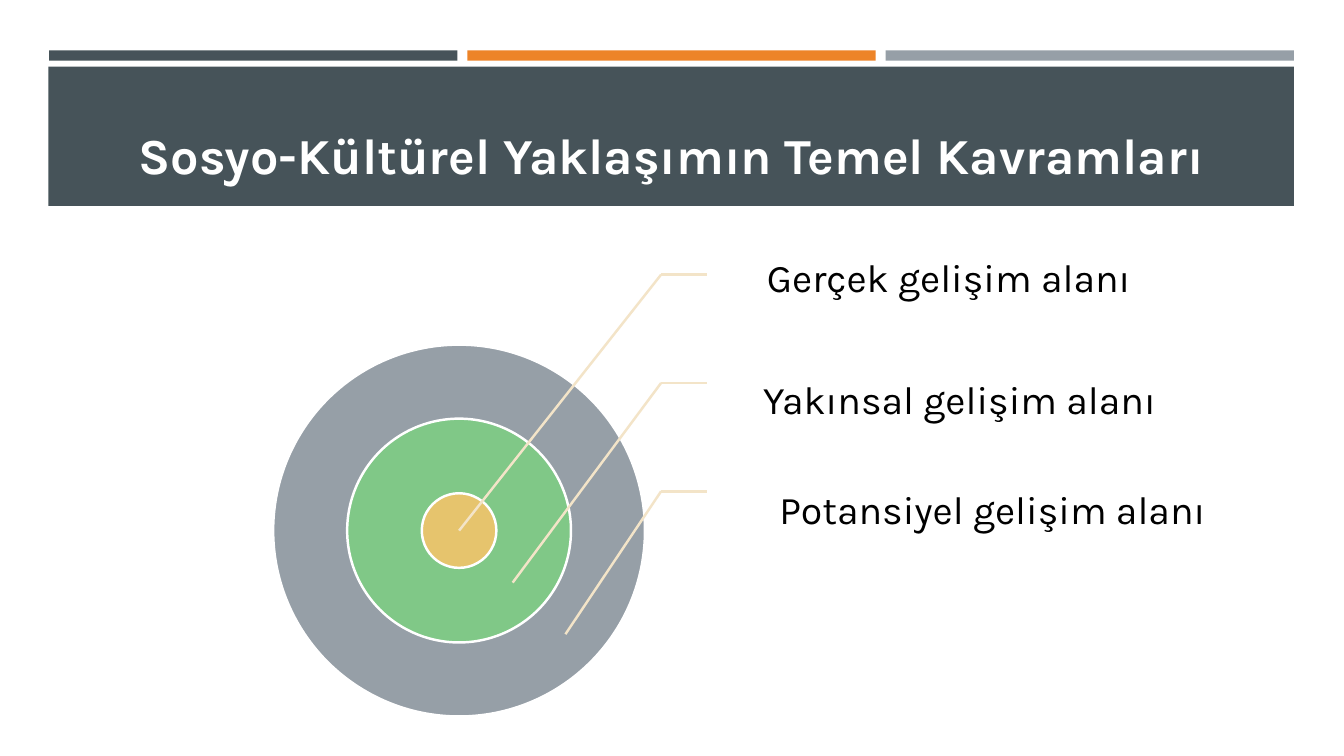
from lxml.etree import SubElement
from pptx import Presentation
from pptx.dml.color import RGBColor
from pptx.enum.shapes import MSO_CONNECTOR, MSO_SHAPE
from pptx.enum.text import MSO_ANCHOR, MSO_AUTO_SIZE, PP_ALIGN
from pptx.oxml.ns import qn
from pptx.util import Cm, Pt

FONT = "Karla"
SLATE, ORANGE, GREY = "465359", "ED8428", "969FA7"
GREEN, GOLD, CREAM = "80C887", "E6C46D", "F3E4C8"
WHITE, BLACK = "FFFFFF", "000000"
LINE_WIDTH = Pt(1.75)

# Common centre of the circles, in cm
CENTER_X, CENTER_Y = 11.57, 13.37
# Bend and outer end of every leader line, in cm
BEND_X, LEADER_END_X = 16.66, 17.83
FIRST_LEADER_Y, LEADER_STEP = 6.92, 2.73


def color(hex_value):
    return RGBColor.from_string(hex_value)


def write(frame, text, *, size, fill, bold=False, align=PP_ALIGN.LEFT,
          anchor=MSO_ANCHOR.MIDDLE, spacing=None, insets=None):
    frame.word_wrap = True
    frame.auto_size = MSO_AUTO_SIZE.NONE
    frame.vertical_anchor = anchor
    if insets:
        (frame.margin_left, frame.margin_top,
         frame.margin_right, frame.margin_bottom) = map(Cm, insets)
    paragraph = frame.paragraphs[0]
    paragraph.alignment = align
    if spacing:
        paragraph.line_spacing = spacing
    run = paragraph.add_run()
    run.text = text
    run.font.name = FONT
    run.font.size = Pt(size)
    run.font.bold = bold
    run.font.color.rgb = color(fill)


def add_filled(slide, kind, left, top, width, height, fill, outline=None):
    filled = slide.shapes.add_shape(kind, Cm(left), Cm(top), Cm(width), Cm(height))
    filled.shadow.inherit = False
    filled.fill.solid()
    filled.fill.fore_color.rgb = color(fill)
    if outline:
        filled.line.color.rgb = color(outline)
        filled.line.width = LINE_WIDTH
    else:
        filled.line.fill.background()


def add_ring(slide, diameter, fill):
    add_filled(slide, MSO_SHAPE.OVAL, CENTER_X - diameter / 2,
               CENTER_Y - diameter / 2, diameter, diameter, fill, outline=WHITE)


def add_line(slide, start, end):
    leader = slide.shapes.add_connector(
        MSO_CONNECTOR.STRAIGHT, *map(Cm, start), *map(Cm, end))
    leader.line.color.rgb = color(CREAM)
    leader.line.width = LINE_WIDTH
    SubElement(leader.element.spPr, qn("a:effectLst"))


def add_label(slide, text, left, top, width):
    label = slide.shapes.add_textbox(Cm(left), Cm(top), Cm(width), Cm(2.74))
    write(label.text_frame, text, size=28, fill=BLACK, spacing=0.9,
          insets=(0.56, 0.1, 0.1, 0.1))


def add_title(slide, text):
    title = slide.shapes.title
    title.left, title.top, title.width, title.height = map(
        Cm, (1.6, 2.03, 30.63, 2.74))
    write(title.text_frame, text, size=36, fill=WHITE, bold=True,
          align=PP_ALIGN.CENTER, anchor=MSO_ANCHOR.BOTTOM)
    # Bring the title in front of its band
    title.element.getparent().append(title.element)


def main():
    deck = Presentation()
    deck.slide_width, deck.slide_height = Cm(33.87), Cm(19.05)
    slide = deck.slides.add_slide(deck.slide_layouts[5])

    # Header: three bars above the title band
    for column, fill in enumerate((SLATE, ORANGE, GREY)):
        add_filled(slide, MSO_SHAPE.RECTANGLE,
                   1.24 + column * 10.54, 1.27, 10.29, 0.26, fill)
    add_filled(slide, MSO_SHAPE.RECTANGLE, 1.22, 1.68, 31.39, 3.51, SLATE)
    add_title(slide, "Sosyo-Kültürel Yaklaşımın Temel Kavramları")

    # Development zones, from the outermost inwards
    for diameter, fill in ((9.37, GREY), (5.64, GREEN), (1.88, GOLD)):
        add_ring(slide, diameter, fill)

    # Labels with the leader line into each zone
    zones = (
        ("Gerçek gelişim alanı", (18.77, 5.69, 13.08), (CENTER_X, CENTER_Y)),
        ("Yakınsal gelişim alanı", (18.67, 8.76, 13.56), (12.92, 14.68)),
        ("Potansiyel gelişim alanı", (19.08, 11.53, 12.78), (14.25, 15.98)),
    )
    for row, (name, place, target) in enumerate(zones):
        bend = (BEND_X, FIRST_LEADER_Y + row * LEADER_STEP)
        add_label(slide, name, *place)
        add_line(slide, bend, (LEADER_END_X, bend[1]))
        add_line(slide, bend, target)

    deck.save("out.pptx")


if __name__ == "__main__":
    main()
